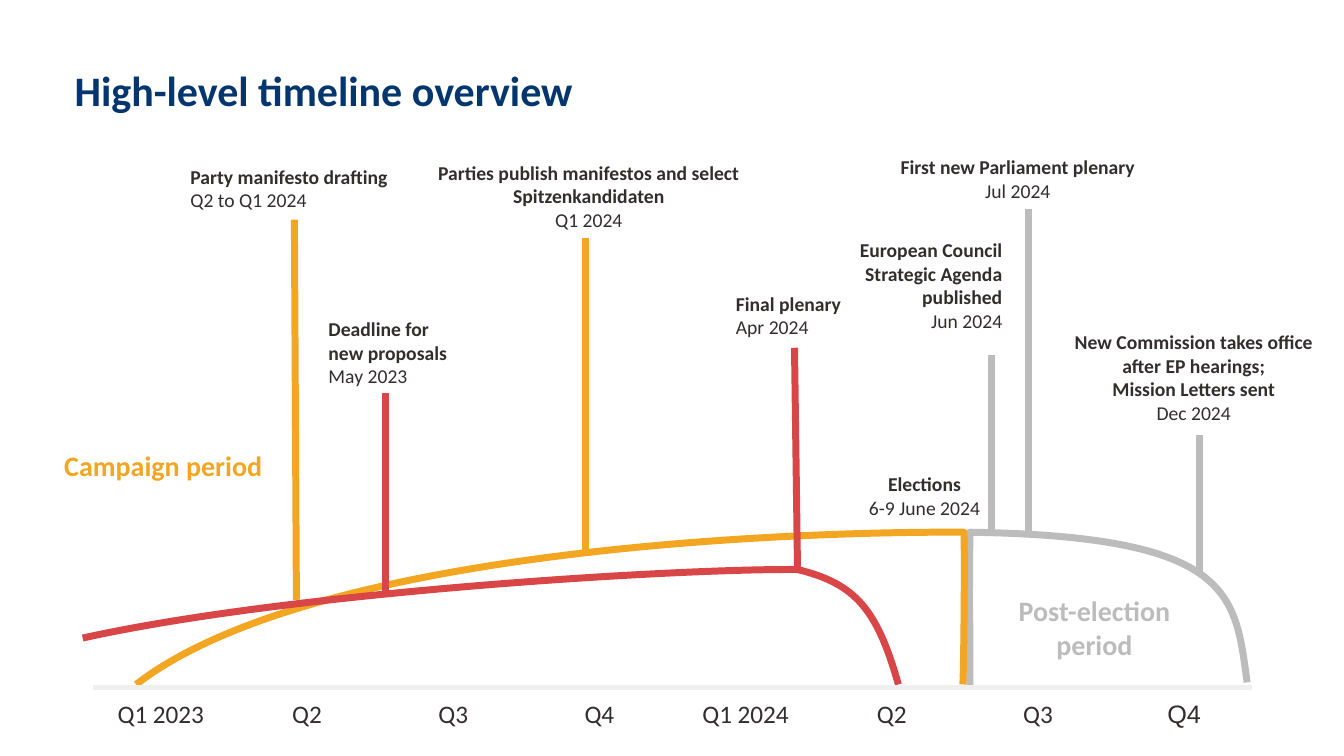
"""Build the high-level timeline slide on a grid of one-inch cells."""
from lxml import etree
from pptx import Presentation, util as u
from pptx.dml.color import RGBColor
from pptx.enum import shapes, text
from pptx.oxml.ns import qn

COLORS = {"title": "03366E", "ink": "332E2E", "campaign": "F2A621",
          "mandate": "D94647", "post": "BCBCBC", "axis": "F0EFEF"}
CELL = u.Inches(1)
AXIS_LEFT, AXIS_ROW, QUARTER = 0.92, 6.82, 1.45
LEFT, CENTER, RIGHT = text.PP_ALIGN.LEFT, text.PP_ALIGN.CENTER, text.PP_ALIGN.RIGHT
FIT, FIXED = text.MSO_AUTO_SIZE.SHAPE_TO_FIT_TEXT, text.MSO_AUTO_SIZE.NONE

deck = Presentation()
deck.slide_width, deck.slide_height = u.Inches(13.33), u.Inches(7.5)
slide = deck.slides.add_slide(deck.slide_layouts[5])


def add_label(area, paragraphs, align=CENTER, size=14, color="ink",
              font="Calibri", wrap=True, fit=FIXED):
    """Write (wording, bold) paragraphs; a newline in the wording breaks the line."""
    label = slide.shapes.add_textbox(*(round(n * CELL) for n in area))
    frame = label.text_frame
    frame.word_wrap, frame.auto_size = wrap, fit
    frame.vertical_anchor = text.MSO_ANCHOR.MIDDLE
    for i, (wording, bold) in enumerate(paragraphs):
        paragraph = frame.add_paragraph() if i else frame.paragraphs[0]
        paragraph.alignment = align
        for j, part in enumerate(wording.split("\n")):
            if j:
                paragraph.add_line_break()
            run = paragraph.add_run()
            run.text = part
            run.font.name, run.font.size, run.font.bold = font, u.Pt(size), bold
            run.font.color.rgb = RGBColor.from_string(COLORS[color])


def add_rule(x1, y1, x2, y2, color, weight=5):
    """Draw a straight line without a shadow."""
    rule = slide.shapes.add_connector(
        shapes.MSO_CONNECTOR.STRAIGHT, *(round(n * CELL) for n in (x1, y1, x2, y2)))
    rule.line.color.rgb = RGBColor.from_string(COLORS[color])
    rule.line.width = u.Pt(weight)
    etree.SubElement(rule._element.spPr, qn("a:effectLst"))


title = slide.shapes.title
title.left, title.top, title.width, title.height = (
    round(n * CELL) for n in (0.74, 0.7, 11.84, 0.5))
heading = title.text_frame
heading.margin_left = heading.margin_right = heading.margin_top = heading.margin_bottom = 0
heading.vertical_anchor = text.MSO_ANCHOR.TOP
heading.paragraphs[0].alignment = LEFT
heading.paragraphs[0].line_spacing = 0.9
heading_run = heading.paragraphs[0].add_run()
heading_run.text = "High-level timeline overview"
heading_run.font.name, heading_run.font.size, heading_run.font.bold = "Calibri", u.Pt(30), True
heading_run.font.color.rgb = RGBColor.from_string(COLORS["title"])

add_rule(2.92, 2.18, 2.94, 5.95, "campaign")

period_curves = [
    ("post", [(12.37, 6.77), (12.25, 5.9), (12.24, 5.32), (9.62, 5.28),
              (9.61, 6.73), (9.62, 5.32), (9.62, 6.8)]),
    ("campaign", [(1.35, 6.79), (3.16, 5.39), (8.18, 5.27), (9.56, 5.28),
                  (9.57, 5.46), (9.56, 6.58), (9.55, 6.79)]),
    ("mandate", [(0.82, 6.33), (2.89, 5.87), (6.71, 5.64), (7.91, 5.65),
                 (8.49, 5.79), (8.7, 6.05), (8.91, 6.79)]),
]
for color, knots in period_curves:
    start, *controls = [(round(x * CELL), round(y * CELL)) for x, y in knots]
    builder = slide.shapes.build_freeform(*start)
    builder.add_line_segments(controls, close=False)
    curve = builder.convert_to_shape()
    curve.shadow.inherit = False
    curve.fill.background()
    curve.line.color.rgb = RGBColor.from_string(COLORS[color])
    curve.line.width = u.Pt(5)
    steps = list(curve._element.iter(qn("a:lnTo")))
    for first in range(0, len(steps), 3):
        bezier = etree.SubElement(steps[first].getparent(), qn("a:cubicBezTo"))
        for step in steps[first:first + 3]:
            bezier.append(step[0])
            step.getparent().remove(step)

quarters = ["Q1 2023", "Q2", "Q3", "Q4", "Q1 2024", "Q2", "Q3", "Q4"]
for i, quarter in enumerate(quarters):
    add_label((AXIS_LEFT + i * QUARTER, 6.87, 1.35, 0.42), [(quarter, False)], size=18,
              font="Arial" if i == len(quarters) - 1 else "Calibri")
add_rule(AXIS_LEFT, AXIS_ROW, 12.42, AXIS_ROW, "axis", 3)

milestone_stems = [
    (7.88, 3.45, 7.91, 5.65, "mandate"),
    (5.81, 2.36, 5.81, 5.47, "campaign"),
    (3.82, 3.9, 3.82, 5.87, "mandate"),
    (11.9, 4.32, 11.9, 5.7, "post"),
    (9.83, 3.52, 9.83, 5.28, "post"),
    (10.2, 2.07, 10.2, 5.29, "post"),
]
for stem in milestone_stems:
    add_rule(*stem)

add_label((9.83, 5.93, 2.05, 0.58), [("Post-election period", True)], size=20, color="post")
add_label((0.42, 4.48, 2.4, 0.28), [("Campaign period", True)], size=20, color="campaign")

milestones = [
    ((7.2, 2.84, 1.41, 0.57), ["Final plenary"], "Apr 2024", LEFT, False, FIT),
    ((3.16, 3.09, 1.57, 0.81), ["Deadline for", "new proposals"], "May 2023", LEFT, False, FIT),
    ((4.1, 1.54, 3.48, 0.81), ["Parties publish manifestos and select Spitzenkandidaten"],
     "Q1 2024", CENTER, True, FIT),
    ((1.79, 1.58, 2.56, 0.57), ["Party manifesto drafting"], "Q2 to Q1 2024", LEFT, True, FIT),
    ((8.38, 4.67, 1.58, 0.5), ["Elections"], "6-9 June 2024", CENTER, True, FIXED),
    ((8.24, 2.19, 1.8, 1.28), ["European Council Strategic Agenda published"],
     "Jun 2024", RIGHT, True, FIT),
    ((10.47, 3.22, 2.74, 1.04),
     ["New Commission takes office after EP hearings;\nMission Letters sent"],
     "Dec 2024", CENTER, True, FIT),
    ((8.67, 1.49, 2.85, 0.57), ["First new Parliament plenary"], "Jul 2024", CENTER, True, FIT),
]
for area, events, date, align, wrap, fit in milestones:
    add_label(area, [(event, True) for event in events] + [(date, False)],
              align, wrap=wrap, fit=fit)

deck.save("out.pptx")
